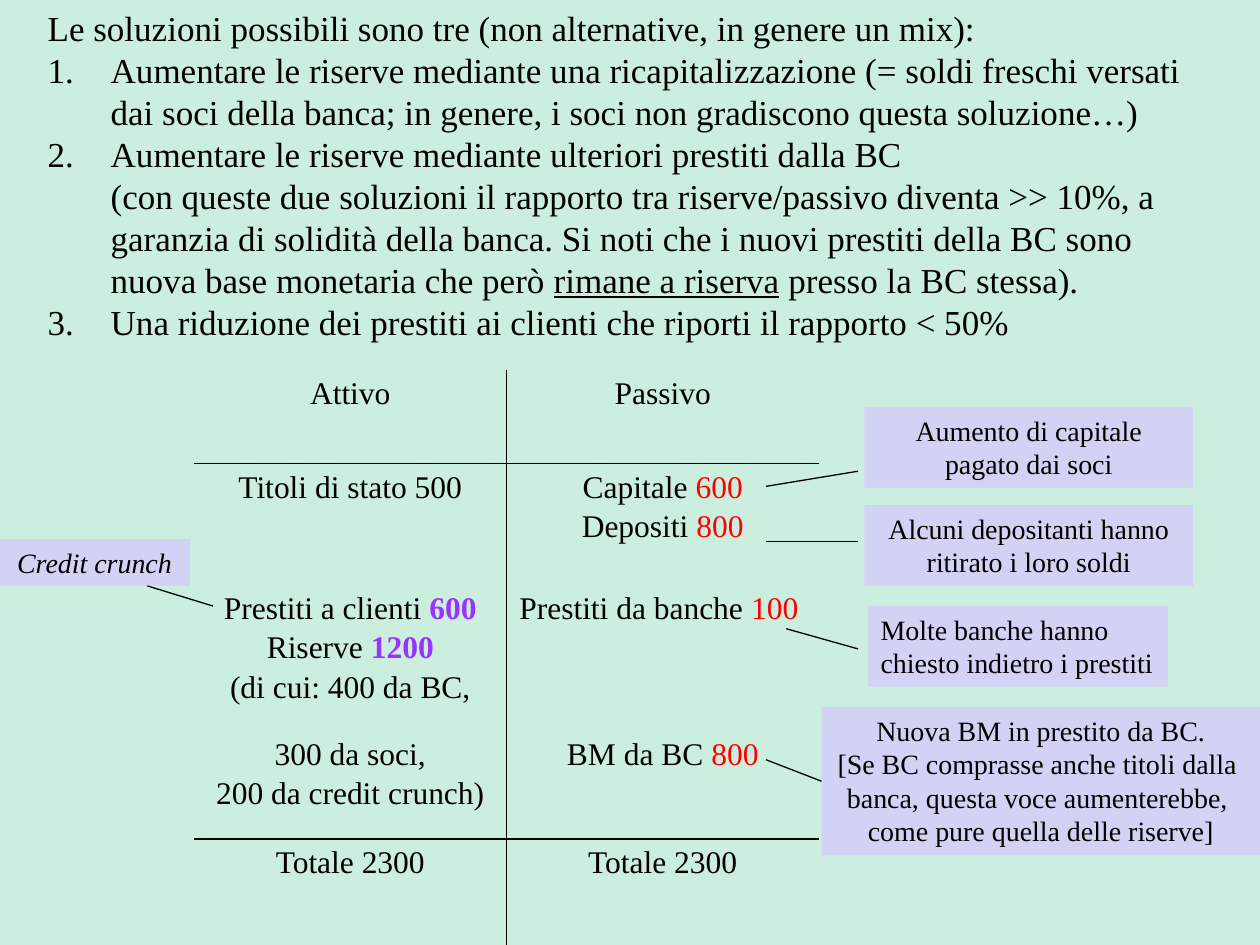
from lxml import etree
from pptx import Presentation
from pptx.dml.color import RGBColor
from pptx.enum.shapes import MSO_CONNECTOR, MSO_SHAPE
from pptx.enum.text import MSO_ANCHOR, PP_ALIGN
from pptx.oxml.ns import qn
from pptx.util import Inches, Pt

CENTER, LEFT = PP_ALIGN.CENTER, PP_ALIGN.LEFT
RECTANGLE, STRAIGHT = MSO_SHAPE.RECTANGLE, MSO_CONNECTOR.STRAIGHT
TOP = MSO_ANCHOR.TOP
LEFT_SIDE = 1

THEME = {
    "font": "Times New Roman",
    "background": "CCEEDF", "note": "D2D2F4", "text": "000000",
    "liability": "FF0000", "asset": "9933FF",
    "body_size": 20, "table_size": 18, "note_size": 16,
    "border": 1, "pointer": 0.75,
}
RED = {"color": THEME["liability"]}
PURPLE = {"color": THEME["asset"], "bold": True}

presentation = Presentation()
presentation.slide_width, presentation.slide_height = Inches(10), Inches(7.5)
UNIT = presentation.slide_width / 100  # one percent of the slide's width


def shares(*values):
    """Lengths from percentages of the slide's width."""
    return [round(value * UNIT) for value in values]


def write(text_frame, paragraphs, size, alignment, space_before=0):
    """Fill a text frame; each paragraph is a list of (text, style) runs."""
    for index, runs in enumerate(paragraphs):
        paragraph = text_frame.add_paragraph() if index else text_frame.paragraphs[0]
        paragraph.alignment = alignment
        paragraph.space_before = Pt(space_before)
        paragraph.font.name = THEME["font"]
        paragraph.font.size = Pt(size)
        paragraph.font.color.rgb = RGBColor.from_string(THEME["text"])
        for text, style in runs:
            run = paragraph.add_run()
            run.text = text
            run.font.name = THEME["font"]
            run.font.size = Pt(size)
            run.font.bold = style.get("bold")
            run.font.italic = style.get("italic")
            run.font.underline = style.get("underline")
            run.font.color.rgb = RGBColor.from_string(style.get("color", THEME["text"]))


slide = presentation.slides.add_slide(presentation.slide_layouts[6])
slide.background.fill.solid()
slide.background.fill.fore_color.rgb = RGBColor.from_string(THEME["background"])

# Numbered solutions: (list number or None, left margin, first-line indent, runs)
solutions = [
    (None, 5, -5, [("Le soluzioni possibili sono tre (non alternative, in genere un mix):", {})]),
    (1, 5, -5, [("Aumentare le riserve mediante una ricapitalizzazione (= soldi freschi versati "
                 "dai soci della banca; in genere, i soci non gradiscono questa soluzione…)", {})]),
    (2, 5, -5, [("Aumentare le riserve mediante ulteriori prestiti dalla BC", {})]),
    (None, 5, 0, [("(con queste due soluzioni il rapporto tra riserve/passivo diventa >> 10%, a "
                   "garanzia di solidità della banca. Si noti che i nuovi prestiti della BC sono "
                   "nuova base monetaria che però ", {}),
                  ("rimane a riserva", {"underline": True}),
                  (" presso la BC stessa).", {})]),
    (3, 5, -5, [("Una riduzione dei prestiti ai clienti che riporti il rapporto < 50%", {})]),
]
body = slide.shapes.add_textbox(*shares(2.8, 0, 95.2, 27.9))
body.text_frame.word_wrap = True
write(body.text_frame, [solution[3] for solution in solutions], THEME["body_size"], LEFT)
for paragraph, (number, margin, indent, _) in zip(body.text_frame.paragraphs, solutions):
    properties = paragraph._p.get_or_add_pPr()
    margin, indent = shares(margin, indent)
    properties.set("marL", str(margin))
    properties.set("indent", str(indent))
    if number:
        etree.SubElement(properties, qn("a:buFont"), typeface="+mj-lt")
        bullet = etree.SubElement(properties, qn("a:buAutoNum"), type="arabicPeriod")
        bullet.set("startAt", str(number))
        # Bullets come before the default run properties
        default_run = properties.find(qn("a:defRPr"))
        if default_run is not None:
            properties.append(default_run)

# Balance sheet of the bank
balance = [
    ([[("Attivo", {})]], [[("Passivo", {})]]),
    ([[("Titoli di stato 500", {})]],
     [[("Capitale ", {}), ("600", RED)], [("Depositi ", {}), ("800", RED)]]),
    ([[("Prestiti a clienti ", {}), ("600", PURPLE)],
      [("Riserve ", {}), ("1200", PURPLE)],
      [("(di cui: 400 da BC,", {})]],
     [[("Prestiti da banche ", {}), ("100 ", RED)]]),
    ([[("300 da soci,", {})], [("200 da credit crunch)", {})]],
     [[("BM da BC ", {}), ("800", RED)]]),
    ([[("Totale 2300", {})]], [[("Totale 2300", {})]]),
]
ROW_HEIGHTS = shares(7.4, 9.6, 11.6, 8.6, 8.4)
RULED_ROWS = (0, 3)  # rows with a line below
table = slide.shapes.add_table(len(balance), 2, *shares(15.4, 29.4, 49.6, 45.6)).table
table.first_row = table.horz_banding = False
for row_index, (row, height) in enumerate(zip(balance, ROW_HEIGHTS)):
    table.rows[row_index].height = height
    for column_index, paragraphs in enumerate(row):
        cell = table.cell(row_index, column_index)
        write(cell.text_frame, paragraphs, THEME["table_size"], CENTER, space_before=2.7)
        visible = {
            "L": column_index == 1,
            "R": column_index == 0,
            "T": row_index - 1 in RULED_ROWS,
            "B": row_index in RULED_ROWS,
        }
        for side, shown in visible.items():
            border = etree.SubElement(cell._tc.get_or_add_tcPr(), qn(f"a:ln{side}"),
                                      w=str(Pt(THEME["border"])))
            fill = etree.SubElement(border, qn("a:solidFill" if shown else "a:noFill"))
            if shown:
                etree.SubElement(fill, qn("a:srgbClr"), val=THEME["text"])
        cell.fill.background()

# Notes: place, wrapping, alignment, lines, style
notes = [
    ((65.2, 56.1, 34.8, 11.8), False, CENTER,
     ["Nuova BM in prestito da BC.", "[Se BC comprasse anche titoli dalla ",
      "banca, questa voce aumenterebbe, ", "come pure quella delle riserve]"], {}),
    ((68.9, 48.1, 23.8, 6.4), False, LEFT,
     ["Molte banche hanno", "chiesto indietro i prestiti"], {}),
    ((68.6, 40.1, 26.1, 6.4), True, CENTER,
     ["Alcuni depositanti hanno ritirato i loro soldi"], {}),
    ((68.6, 32.3, 26.1, 6.4), True, CENTER, ["Aumento di capitale pagato dai soci"], {}),
    ((-0.1, 42.8, 15.2, 3.7), True, CENTER, ["Credit crunch"], {"italic": True}),
]
note_shapes = []
for place, wrapped, alignment, lines, style in notes:
    shape = slide.shapes.add_shape(RECTANGLE, *shares(*place))
    shape.shadow.inherit = False
    shape.fill.solid()
    shape.fill.fore_color.rgb = RGBColor.from_string(THEME["note"])
    shape.line.fill.background()
    shape.text_frame.word_wrap = wrapped
    shape.text_frame.vertical_anchor = TOP
    write(shape.text_frame, [[(line, style)] for line in lines], THEME["note_size"], alignment)
    note_shapes.append(shape)

# Pointers between table entries and notes: start, end, joined note
pointers = [
    ((60.8, 60.3), (65.2, 62), note_shapes[0]),
    ((68.1, 51.5), (62.4, 49.9), None),
    ((60.8, 43), (68.1, 43), None),
    ((60.8, 38.6), (68.1, 37.4), None),
    ((11.7, 46.5), (16.9, 48.1), None),
]
for start, end, note in pointers:
    connector = slide.shapes.add_connector(STRAIGHT, *shares(*start, *end))
    connector.line.color.rgb = RGBColor.from_string(THEME["text"])
    connector.line.width = Pt(THEME["pointer"])
    etree.SubElement(connector._element.spPr, qn("a:effectLst"))
    if note:
        connector.end_connect(note, LEFT_SIDE)

presentation.save("out.pptx")
